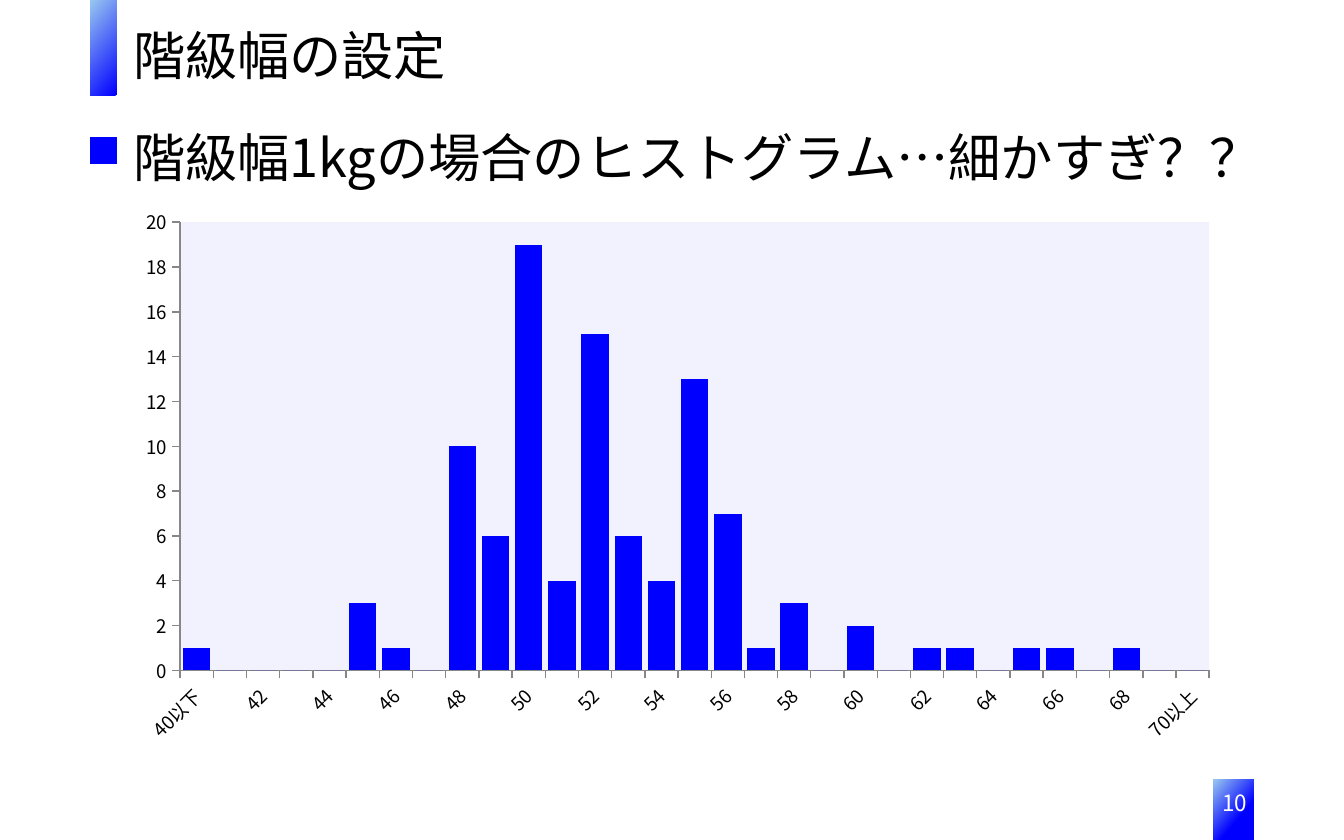
from lxml import etree
from pptx import Presentation
from pptx import util as u
from pptx.chart.data import CategoryChartData
from pptx.dml.color import RGBColor
from pptx.enum import chart as ch, shapes, text
from pptx.oxml import parse_xml
from pptx.oxml.ns import nsdecls, qn

BLUE = RGBColor(0x00, 0x00, 0xFF)
SKY = RGBColor(0x99, 0xC8, 0xF0)
PALE = RGBColor(0xF2, 0xF2, 0xFF)
GRAY = RGBColor(0x87, 0x87, 0x87)
BLACK = RGBColor(0x00, 0x00, 0x00)
WHITE = RGBColor(0xFF, 0xFF, 0xFF)
FONT = "Noto Sans CJK JP"
COLS, ROWS = 100, 62.5  # grid units across and down the slide

WEIGHTS = ["40以下", *map(str, range(41, 70)), "70以上"]
COUNTS = [1, 0, 0, 0, 0, 3, 1, 0, 10, 6, 19, 4, 15, 6, 4, 13,
          7, 1, 3, 0, 2, 0, 1, 1, 0, 1, 1, 0, 1, 0, 0]


def set_font(font, size, color):
    font.name = FONT
    font.size = u.Pt(size)
    font.color.rgb = color


def write(sp, content, size=28, color=BLACK, align=text.PP_ALIGN.LEFT,
          anchor=text.MSO_ANCHOR.TOP, line=1.0,
          fit=text.MSO_AUTO_SIZE.SHAPE_TO_FIT_TEXT):
    tf = sp.text_frame
    tf.word_wrap = True
    tf.auto_size = fit
    tf.vertical_anchor = anchor
    p = tf.paragraphs[0]
    p.alignment = align
    p.line_spacing = line
    p.space_before = u.Pt(0)
    r = p.add_run()
    r.text = content
    set_font(r.font, size, color)
    etree.SubElement(r.font._element, qn("a:ea"), typeface=FONT)
    return p


class SlideBuilder:
    """Holds the grid and the slide that is being filled."""

    def __init__(self, prs):
        self.col = prs.slide_width / COLS
        self.row = prs.slide_height / ROWS
        self.s = prs.slides.add_slide(prs.slide_layouts[1])

    def box(self, x, y, w, h):
        return [u.Emu(round(n * unit)) for n, unit in
                zip((x, y, w, h), (self.col, self.row) * 2)]

    def place(self, sp, *cells):
        sp.left, sp.top, sp.width, sp.height = self.box(*cells)

    def title(self, content, *cells):
        sp = self.s.shapes.title
        self.place(sp, *cells)
        write(sp, content, anchor=text.MSO_ANCHOR.MIDDLE)

    def body(self, content, *cells):
        sp = self.s.placeholders[1]
        self.place(sp, *cells)
        pPr = write(sp, content, line=1.2)._p.get_or_add_pPr()
        pPr.set("marL", "0")
        pPr.set("indent", "0")
        etree.SubElement(pPr, qn("a:buNone"))

    def label(self, content, *cells, **fmt):
        write(self.s.shapes.add_textbox(*self.box(*cells)), content, **fmt)

    def block(self, *cells, blue_until=None):
        """A blue rectangle; blue_until makes it fade to sky blue from there."""
        sp = self.s.shapes.add_shape(shapes.MSO_SHAPE.RECTANGLE, *self.box(*cells))
        sp.shadow.inherit = False
        sp.line.fill.background()
        if blue_until is None:
            sp.fill.solid()
            sp.fill.fore_color.rgb = BLUE
            return
        sp.fill.gradient()
        sp.fill.gradient_angle = 140
        stops = zip(sp.fill.gradient_stops, (blue_until, 1), (BLUE, SKY))
        for stop, position, color in stops:
            stop.position = position
            stop.color.rgb = color

    def histogram(self, cats, vals, *cells):
        data = CategoryChartData()
        data.categories = cats
        data.add_series("Series 1", vals)
        chart = self.s.shapes.add_chart(
            ch.XL_CHART_TYPE.COLUMN_CLUSTERED, *self.box(*cells), data).chart
        chart.has_legend = chart.has_title = False
        set_font(chart.font, 10, BLACK)
        plot = chart.plots[0]
        plot.vary_by_categories = False
        plot.gap_width, plot.overlap = 21, 24
        fill = plot.series[0].format.fill
        fill.solid()
        fill.fore_color.rgb = BLUE
        for axis in (chart.category_axis, chart.value_axis):
            axis.has_major_gridlines = False
            axis.major_tick_mark = ch.XL_TICK_MARK.OUTSIDE
            axis.minor_tick_mark = ch.XL_TICK_MARK.NONE
            axis.format.line.color.rgb = GRAY
            axis.format.line.width = u.Pt(0.75)
            set_font(axis.tick_labels.font, 10, BLACK)
        axis.minimum_scale, axis.maximum_scale, axis.major_unit = 0, 20, 2
        self.slant_labels(chart.category_axis._element)
        self.frame_plot(chart._chartSpace.chart.plotArea)

    def slant_labels(self, cat_ax):
        """Turn the labels by 45 degrees and show every second one."""
        cat_ax.find(qn("c:txPr")).find(qn("a:bodyPr")).set("rot", "-2700000")
        skip = parse_xml(f'<c:tickLblSkip {nsdecls("c")} val="2"/>')
        cat_ax.find(qn("c:noMultiLvlLbl")).addprevious(skip)

    def frame_plot(self, area):
        """Fix the inner plot area and give it a pale fill."""
        for old in area.findall(qn("c:layout")):
            area.remove(old)
        sides = {"x": 0.052, "y": 0.044, "w": 0.926, "h": 0.8}
        modes = "".join(f'<c:{k}Mode val="edge"/>' for k in "xy")
        values = "".join(f'<c:{k} val="{v}"/>' for k, v in sides.items())
        area.insert(0, parse_xml(
            f'<c:layout {nsdecls("c")}><c:manualLayout>'
            f'<c:layoutTarget val="inner"/>{modes}{values}'
            '</c:manualLayout></c:layout>'))
        area.append(parse_xml(
            f'<c:spPr {nsdecls("c", "a")}><a:solidFill>'
            f'<a:srgbClr val="{PALE}"/></a:solidFill>'
            '<a:ln><a:noFill/></a:ln></c:spPr>'))


def main():
    prs = Presentation()
    prs.slide_width, prs.slide_height = u.Inches(10), u.Inches(6.25)
    b = SlideBuilder(prs)
    b.block(90.3, 58, 3, 4.5, blue_until=0.36)
    b.label("10", 88.1, 58.2, 7.5, 3.3, size=12, color=WHITE,
            align=text.PP_ALIGN.CENTER, fit=text.MSO_AUTO_SIZE.NONE)
    b.block(6.7, 0, 2, 7.1, blue_until=0)
    b.histogram(WEIGHTS, COUNTS, 9.1, 14.7, 82.7, 41.7)
    b.block(6.7, 10.2, 2, 2)
    b.body("階級幅1kgの場合のヒストグラム…細かすぎ？？", 8.9, 7.9, 91.1, 6.7)
    b.title("階級幅の設定", 8.9, 1.2, 90.9, 5.7)
    prs.save("out.pptx")


if __name__ == "__main__":
    main()
